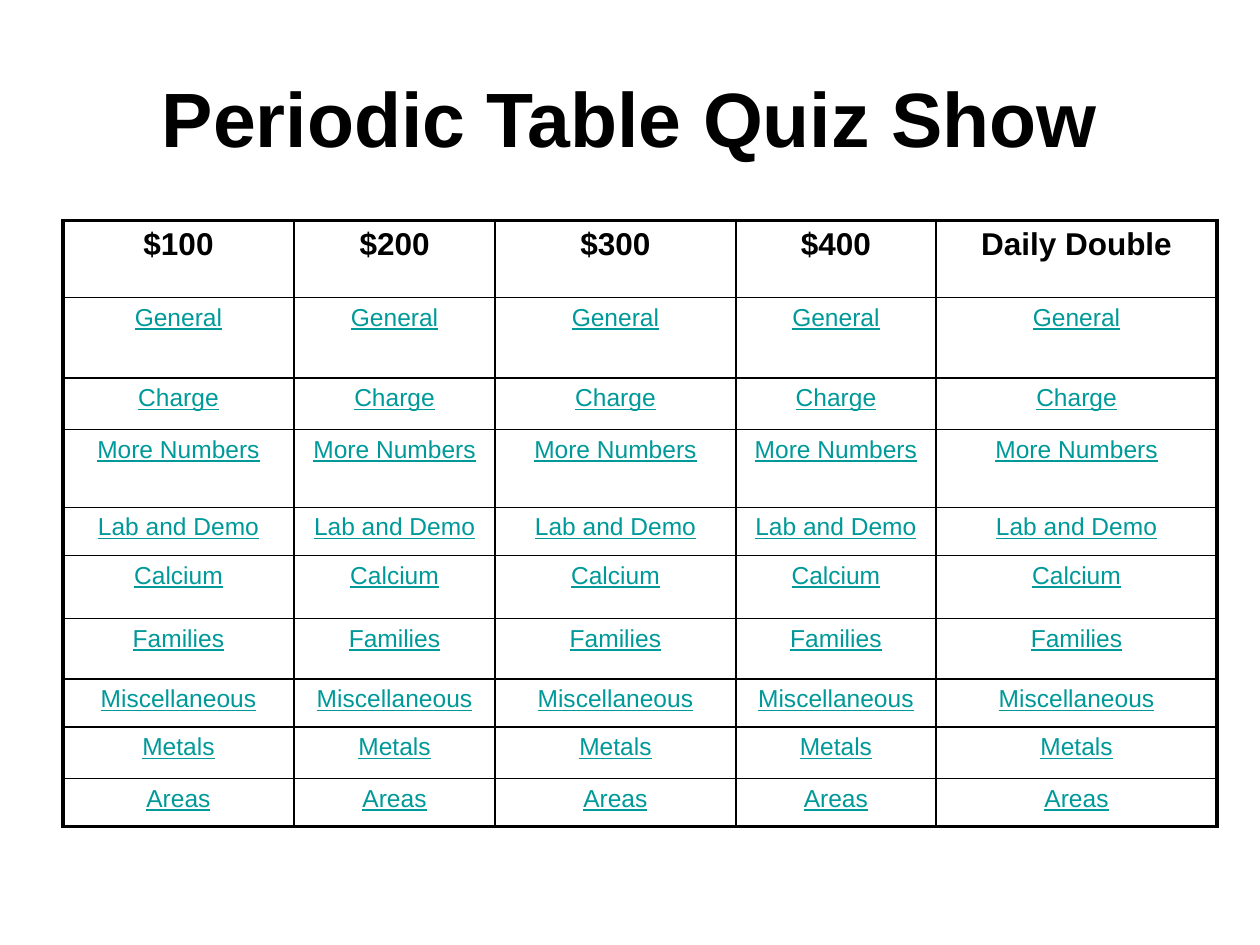
from pptx import Presentation
from pptx import util as u
from pptx.dml.color import RGBColor
from pptx.enum import text
from pptx.oxml import parse_xml
from pptx.oxml.ns import nsdecls

BLACK = RGBColor(0x00, 0x00, 0x00)
TEAL = RGBColor(0x00, 0x99, 0x99)
THIN, THICK = 1, 2.25

PRICES = ["$100", "$200", "$300", "$400", "Daily Double"]
TOPICS = ["General", "Charge", "More Numbers", "Lab and Demo", "Calcium",
          "Families", "Miscellaneous", "Metals", "Areas"]
WIDTHS = [132, 115, 137.5, 114.5, 160.5]
HEIGHTS = [44, 46, 29.5, 44.5, 27.5, 36, 34.5, 27.5, 29.5, 27.5]


def add_run(para, words, size, color, bold=False, line=False):
    para.alignment = text.PP_ALIGN.CENTER
    run = para.add_run()
    run.text = words
    font = run.font
    font.name = "Arial"
    font.size = u.Pt(size)
    font.bold = bold
    font.underline = line
    font.color.rgb = color


def set_gap(para, percent):
    props = para._p.get_or_add_pPr()
    props.append(parse_xml(
        f'<a:spcBef {nsdecls("a")}><a:spcPct val="{percent * 1000}"/></a:spcBef>'))


def set_edge(cell, side, width):
    cell._tc.get_or_add_tcPr().append(parse_xml(
        f'<a:ln{side} {nsdecls("a")} w="{u.Pt(width)}"><a:solidFill>'
        f'<a:srgbClr val="{BLACK}"/></a:solidFill></a:ln{side}>'))


def add_title(slide, words):
    title = slide.shapes.title
    title.left, title.top = u.Pt(36), u.Pt(21.6)
    title.width, title.height = u.Pt(648), u.Pt(90)
    title.text_frame.vertical_anchor = text.MSO_ANCHOR.MIDDLE
    add_run(title.text_frame.paragraphs[0], words, 44, BLACK, bold=True)


def fill_cell(cell, words, head, outer):
    para = cell.text_frame.paragraphs[0]
    set_gap(para, 20)
    if head:
        add_run(para, words, 18, BLACK, bold=True)
    else:
        add_run(para, words, 14, TEAL, line=True)
    for side in "LRTB":
        set_edge(cell, side, THICK if side in outer else THIN)
    cell.fill.background()


def add_board(slide):
    rows = [PRICES] + [[topic] * len(PRICES) for topic in TOPICS]
    frame = slide.shapes.add_table(
        len(rows), len(PRICES), u.Pt(36), u.Pt(126),
        u.Pt(sum(WIDTHS)), u.Pt(sum(HEIGHTS)))
    board = frame.table
    board.first_row = board.horz_banding = False
    for col, width in zip(board.columns, WIDTHS):
        col.width = u.Pt(width)
    for row, height in zip(board.rows, HEIGHTS):
        row.height = u.Pt(height)
    for i, row in enumerate(rows):
        for j, words in enumerate(row):
            ends = {"L": j == 0, "R": j == len(row) - 1,
                    "T": i == 0, "B": i == len(rows) - 1}
            outer = [side for side, end in ends.items() if end]
            fill_cell(board.cell(i, j), words, i == 0, outer)


def main():
    deck = Presentation()
    deck.slide_width, deck.slide_height = u.Pt(720), u.Pt(540)
    slide = deck.slides.add_slide(deck.slide_layouts[5])
    add_title(slide, "Periodic Table Quiz Show")
    add_board(slide)
    deck.save("out.pptx")


if __name__ == "__main__":
    main()
